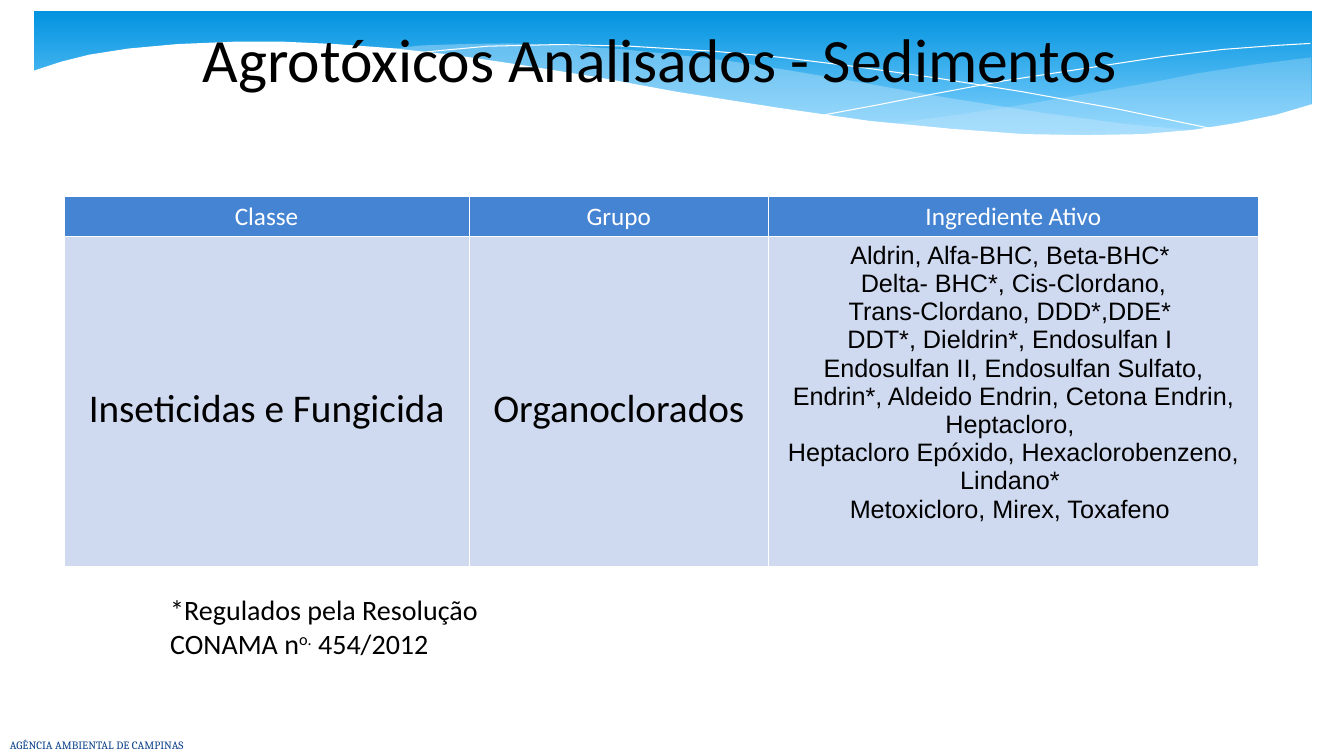
from lxml.etree import SubElement
from pptx import Presentation
from pptx.dml.color import RGBColor
from pptx.enum.shapes import MSO_SHAPE as Preset
from pptx.enum.text import MSO_ANCHOR as Anchor, PP_ALIGN as Align
from pptx.oxml.ns import qn
from pptx.util import Pt

COLORS = {
    "white": "FFFFFF", "black": "000000", "navy": "073E87",
    "sky": "0293E0", "light sky": "83D3FE", "pale sky": "C6E7FC",
    "header": "4584D3", "body": "CFD9EF",
}

TITLE = "Agrotóxicos Analisados - Sedimentos"
AGENCY = "AGÊNCIA AMBIENTAL DE CAMPINAS"
NOTE = [("*Regulados pela Resolução CONAMA n", 0), ("o.", 30), (" 454/2012", 0)]

HEADERS = ["Classe", "Grupo", "Ingrediente Ativo"]
PESTICIDE_CLASS = "Inseticidas e Fungicida"
PESTICIDE_GROUP = "Organoclorados"
INGREDIENTS = [
    "Aldrin, Alfa-BHC, Beta-BHC* ",
    "Delta- BHC*, Cis-Clordano,",
    "Trans-Clordano, DDD*,DDE* ",
    "DDT*, Dieldrin*, Endosulfan I ",
    "Endosulfan II, Endosulfan Sulfato, Endrin*, Aldeido Endrin, Cetona Endrin, Heptacloro, ",
    "Heptacloro Epóxido, Hexaclorobenzeno, Lindano* ",
    "Metoxicloro, Mirex, Toxafeno ",
]
COLUMN_WIDTHS = [289.4, 213.8, 350]
ROW_HEIGHTS = [28.4, 236.2]

# Outlines of the header waves, in points
RIGHT_BAND = [
    (936.5, 41), (897, 46), (855, 52.5), (826, 58.3), (772.5, 67.7), (723.5, 76),
    (677.5, 83), (635, 88.5), (677, 93), (715, 95), (749.5, 97), (781, 97.3),
    (811, 96.7), (837.5, 95), (861, 92.2), (884, 88.5), (911.5, 82.8), (936.5, 75.5),
]
WIDE_BAND = [
    (857, 93.6), (803.5, 88.5), (744.5, 80.5), (677.5, 70), (604, 57), (560, 49.7),
    (519, 43.3), (481.5, 39), (445.5, 35.3), (403, 32.4), (364.5, 31), (330.5, 31.5),
    (301, 32.5), (275, 35.3), (310.5, 39), (348, 43.3), (388, 49.6), (431.5, 57),
    (508.5, 70.5), (577.5, 81.3), (638.5, 89.3), (693.5, 94.3), (741.5, 97.2),
    (785, 98), (823, 96.5),
]
FALLING_LINE = [
    (296.5, 38), (315.5, 36), (348.5, 33), (399.5, 31.8), (450, 33), (511, 36.7),
    (558, 41), (610.5, 47.5), (667.5, 55.5), (730, 65.5), (798, 77.8), (871, 93),
]
RISING_LINE = [
    (589, 82), (626.5, 75), (667.5, 67), (718, 57.6), (774, 49), (831.5, 40.3),
    (873.5, 35.3), (912, 32.4), (936, 31),
]
WHITE_WAVE = [
    (938, 74.2), (911.5, 82), (883.5, 87.8), (852, 92.8), (816.5, 95.8), (776, 96.5),
    (731, 95.8), (679.5, 92), (621.5, 86.4), (556, 77), (483, 65.5), (429, 55.5),
    (375, 46.8), (326, 39.5), (281, 34.5), (240, 31.5), (203, 29.8), (169, 29.7),
    (126.5, 31.5), (91.5, 34.7), (64, 39), (44, 44), (22.3, 51.1), (22.3, 134.5),
    (938, 134.5),
]
# Outline, fill, opacity in percent; no fill means an open white line
WAVES = [
    (RIGHT_BAND, "pale sky", 29),
    (WIDE_BAND, "pale sky", 40),
    (FALLING_LINE, None, 100),
    (RISING_LINE, None, 100),
    (WHITE_WAVE, "white", 100),
]


def rgb(name):
    return RGBColor.from_string(COLORS[name])


def add_run(paragraph, text, size, color, font="Calibri", baseline=0):
    """Add one run; baseline is the superscript rise in percent."""
    run = paragraph.add_run()
    run.text = text
    run.font.size = Pt(size)
    run.font.name = font
    run.font.color.rgb = rgb(color)
    if baseline:
        run._r.get_or_add_rPr().set("baseline", str(baseline * 1000))


def add_text_box(slide, left, top, width, height, anchor):
    """Add a wrapping text box and return its first paragraph."""
    frame = slide.shapes.add_textbox(Pt(left), Pt(top), Pt(width), Pt(height)).text_frame
    frame.word_wrap = True
    frame.vertical_anchor = anchor
    return frame.paragraphs[0]


def add_header_band(slide):
    band = slide.shapes.add_shape(Preset.ROUNDED_RECTANGLE, Pt(24), Pt(8), Pt(913), Pt(98))
    band.adjustments[0] = 0
    band.shadow.inherit = False
    band.line.fill.background()
    band.fill.gradient()
    band.fill.gradient_angle = 270
    for stop, color, position in zip(band.fill.gradient_stops, ("sky", "light sky"), (0, 0.9)):
        stop.color.rgb = rgb(color)
        stop.position = position


def add_wave(slide, points, fill, opacity):
    corners = [(Pt(x), Pt(y)) for x, y in points]
    builder = slide.shapes.build_freeform(*corners[0])
    builder.add_line_segments(corners[1:], close=fill is not None)
    wave = builder.convert_to_shape()
    wave.shadow.inherit = False
    if fill is None:
        wave.fill.background()
        wave.line.color.rgb = rgb("white")
        wave.line.width = Pt(0)
        return
    wave.line.fill.background()
    wave.fill.solid()
    wave.fill.fore_color.rgb = rgb(fill)
    if opacity < 100:
        color = wave._element.spPr.find(qn("a:solidFill"))[0]
        SubElement(color, qn("a:alpha"), val=str(opacity * 1000))


def fill_cell(cell, lines, fill, size, color, font="Calibri"):
    properties = cell._tc.get_or_add_tcPr()
    for side in ("a:lnL", "a:lnR", "a:lnT", "a:lnB"):
        border = SubElement(properties, qn(side), w=str(Pt(1)))
        SubElement(SubElement(border, qn("a:solidFill")), qn("a:srgbClr"), val=COLORS["white"])
    cell.fill.solid()
    cell.fill.fore_color.rgb = rgb(fill)
    frame = cell.text_frame
    for index, line in enumerate(lines):
        paragraph = frame.add_paragraph() if index else frame.paragraphs[0]
        paragraph.alignment = Align.CENTER
        add_run(paragraph, line, size, color, font)


def add_pesticide_table(slide):
    table = slide.shapes.add_table(
        2, 3, Pt(45.7), Pt(140), Pt(sum(COLUMN_WIDTHS)), Pt(sum(ROW_HEIGHTS))
    ).table
    for column, width in zip(table.columns, COLUMN_WIDTHS):
        column.width = Pt(width)
    for row, height in zip(table.rows, ROW_HEIGHTS):
        row.height = Pt(height)
    for index, header in enumerate(HEADERS):
        fill_cell(table.cell(0, index), [header], "header", 18, "white")
        table.cell(0, index).text_frame.paragraphs[0].runs[0].font.bold = False
    for index, label in enumerate((PESTICIDE_CLASS, PESTICIDE_GROUP)):
        cell = table.cell(1, index)
        cell.margin_top = Pt(106)
        fill_cell(cell, [label], "body", 28, "black")
    fill_cell(table.cell(1, 2), INGREDIENTS, "body", 18, "black", "Arial")


def main():
    presentation = Presentation()
    presentation.slide_width, presentation.slide_height = Pt(960), Pt(540)
    slide = presentation.slides.add_slide(presentation.slide_layouts[6])

    add_header_band(slide)
    for points, fill, opacity in WAVES:
        add_wave(slide, points, fill, opacity)

    agency = add_text_box(slide, 0, 517.7, 397.4, 28.8, Anchor.MIDDLE)
    add_run(agency, AGENCY, 8, "navy", "Cambria")
    title = add_text_box(slide, 57.6, -10.8, 828, 104.4, Anchor.MIDDLE)
    title.alignment = Align.CENTER
    add_run(title, TITLE, 44, "black")

    add_pesticide_table(slide)

    note = add_text_box(slide, 114.5, 419.8, 284.4, 55.4, Anchor.TOP)
    for text, baseline in NOTE:
        add_run(note, text, 20, "black", baseline=baseline)

    presentation.save("out.pptx")


if __name__ == "__main__":
    main()
